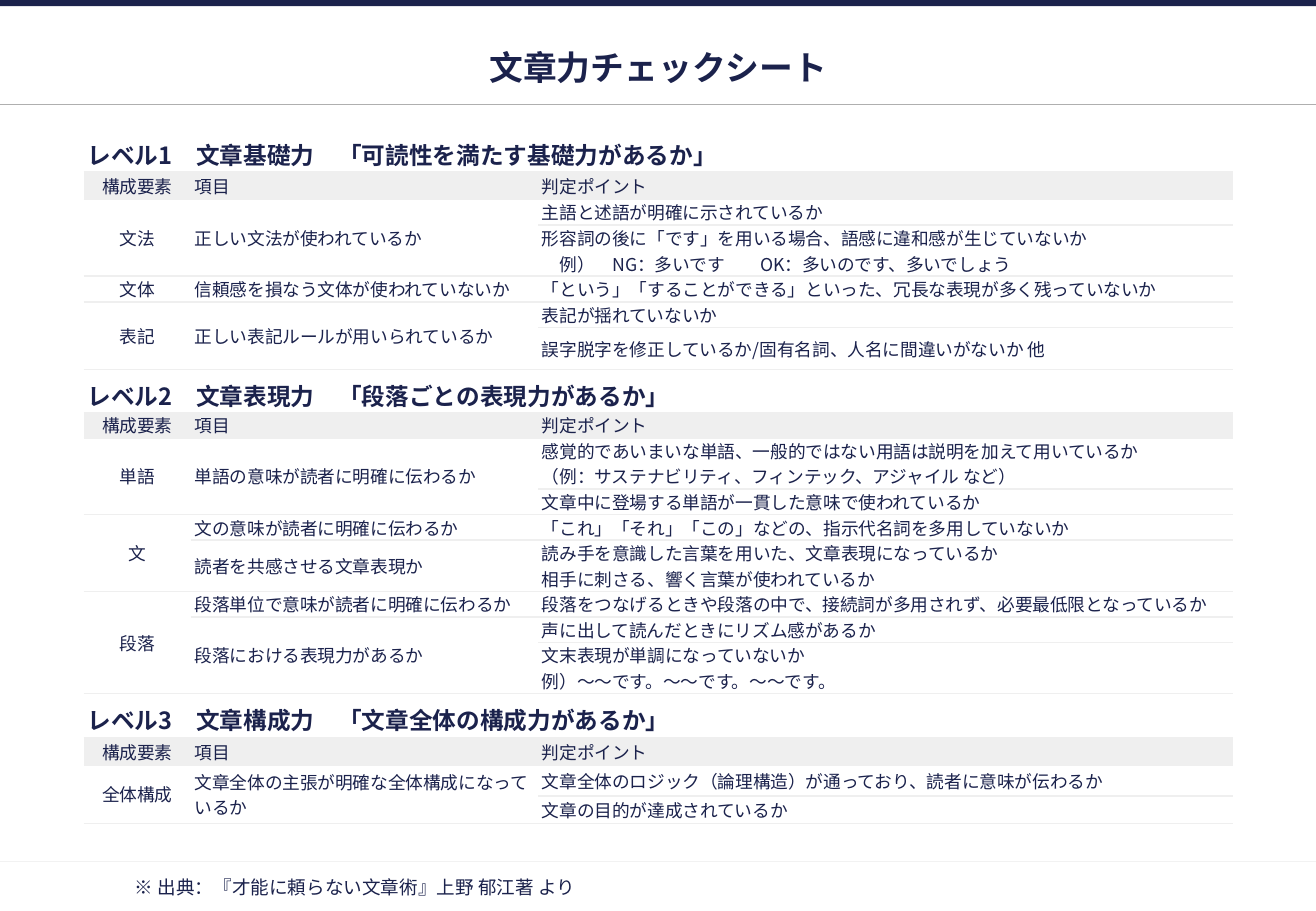
"""Build the writing-skill check sheet: a title, three level tables and a source line."""
import pptx
import pptx.util
import pptx.enum.shapes
import pptx.enum.text
import pptx.oxml
import pptx.oxml.ns
from lxml import etree
from pptx.dml.color import RGBColor
from pptx.util import Cm, Pt

COLORS = {"navy": "1B224C", "rule": "AFAFAF", "footer": "F2F2F2", "band": "EFEFEF"}
FONT = "Noto Sans CJK JP"
PLAIN_TABLE = "{2D5ABB26-0587-4C30-8999-92F81FD0307C}"
CENTER = pptx.enum.text.PP_ALIGN.CENTER
LEFT = pptx.enum.text.PP_ALIGN.LEFT
MIDDLE = pptx.enum.text.MSO_ANCHOR.MIDDLE
qn = pptx.oxml.ns.qn


def style_text(frame, size, bold=False, align=LEFT):
    for paragraph in frame.paragraphs:
        paragraph.alignment = align
        font = paragraph.font
        font.name = FONT
        font.size = Pt(size)
        font.bold = bold
        font.color.rgb = RGBColor.from_string(COLORS["navy"])
        defaults = paragraph._p.pPr.find(qn("a:defRPr"))
        etree.SubElement(defaults, qn("a:ea")).set("typeface", FONT)


def add_border(cell, position, side):
    border = pptx.oxml.parse_xml(
        f'<a:{side} xmlns:a="http://schemas.openxmlformats.org/drawingml/2006/main" w="12700">'
        f'<a:solidFill><a:srgbClr val="{COLORS["band"]}"/></a:solidFill></a:{side}>')
    cell._tc.get_or_add_tcPr().insert(position, border)


column_widths = [2.24, 7.26, 14.53]
column_heads = ("構成要素", "項目", "判定ポイント")
levels = [
    (2.87, "レベル1　文章基礎力　「可読性を満たす基礎力があるか」",
     [0.71, 0.58, 0.51, 1.07, 0.53, 0.53, 0.88],
     [("文法", "正しい文法が使われているか", "主語と述語が明確に示されているか"),
      ("", "", "形容詞の後に「です」を用いる場合、語感に違和感が生じていないか\v"
       "　例）　NG：多いです　　OK：多いのです、多いでしょう"),
      ("文体", "信頼感を損なう文体が使われていないか",
       "「という」「することができる」といった、冗長な表現が多く残っていないか"),
      ("表記", "正しい表記ルールが用いられているか", "表記が揺れていないか"),
      ("", "", "誤字脱字を修正しているか/固有名詞、人名に間違いがないか 他")]),
    (7.9, "レベル2　文章表現力　「段落ごとの表現力があるか」",
     [0.66, 0.51, 1.01, 0.51, 0.51, 1.01, 0.51, 0.51, 1.01],
     [("単語", "単語の意味が読者に明確に伝わるか",
       "感覚的であいまいな単語、一般的ではない用語は説明を加えて用いているか\v"
       "（例：サステナビリティ、フィンテック、アジャイル など）"),
      ("", "", "文章中に登場する単語が一貫した意味で使われているか"),
      ("文", "文の意味が読者に明確に伝わるか",
       "「これ」「それ」「この」などの、指示代名詞を多用していないか"),
      ("", "読者を共感させる文章表現か",
       "読み手を意識した言葉を用いた、文章表現になっているか\n"
       "相手に刺さる、響く言葉が使われているか"),
      ("段落", "段落単位で意味が読者に明確に伝わるか",
       "段落をつなげるときや段落の中で、接続詞が多用されず、必要最低限となっているか"),
      ("", "段落における表現力があるか", "声に出して読んだときにリズム感があるか"),
      ("", "", "文末表現が単調になっていないか\v例）～～です。～～です。～～です。")]),
    (14.68, "レベル3　文章構成力　「文章全体の構成力があるか」",
     [0.75, 0.57, 0.65, 0.57],
     [("全体構成", "文章全体の主張が明確な全体構成になっているか",
       "文章全体のロジック（論理構造）が通っており、読者に意味が伝わるか"),
      ("", "", "文章の目的が達成されているか")]),
]

deck = pptx.Presentation()
deck.slide_width, deck.slide_height = Cm(27.51), Cm(19.05)
slide = deck.slides.add_slide(deck.slide_layouts[5])

top_bar = slide.shapes.add_shape(
    pptx.enum.shapes.MSO_SHAPE.RECTANGLE, 0, 0, deck.slide_width, Cm(0.13))
top_bar.shadow.inherit = False
top_bar.fill.solid()
top_bar.fill.fore_color.rgb = RGBColor.from_string(COLORS["navy"])
top_bar.line.fill.background()

for rule_top, color in [(2.18, "rule"), (18.01, "footer")]:
    rule = slide.shapes.add_connector(
        pptx.enum.shapes.MSO_CONNECTOR.STRAIGHT, 0, Cm(rule_top), deck.slide_width, Cm(rule_top))
    rule.line.color.rgb = RGBColor.from_string(COLORS[color])
    rule.line.width = Pt(0.75)
    etree.SubElement(rule._element.spPr, qn("a:effectLst"))

heading = slide.shapes.title
heading.left, heading.top, heading.width, heading.height = Cm(1.75), Cm(0.86), Cm(24.03), Cm(1.07)
heading_frame = heading.text_frame
heading_frame.text = "文章力チェックシート"
heading_frame.vertical_anchor = MIDDLE
heading_frame.margin_left = heading_frame.margin_right = Cm(0.1)
heading_frame.margin_top = heading_frame.margin_bottom = Cm(0.1)
style_text(heading_frame, 20, bold=True, align=CENTER)

for level_top, level_name, row_heights, checks in levels:
    rows = [(level_name, "", ""), column_heads] + checks
    level_frame = slide.shapes.add_table(
        len(rows), 3, Cm(1.75), Cm(level_top), Cm(sum(column_widths)), Cm(sum(row_heights)))
    sheet = level_frame.table
    sheet.first_row = sheet.horz_banding = False
    sheet._tbl.tblPr.find(qn("a:tableStyleId")).text = PLAIN_TABLE
    for column, width in zip(sheet.columns, column_widths):
        column.width = Cm(width)
    for r, (height, texts) in enumerate(zip(row_heights, rows)):
        sheet.rows[r].height = Cm(height)
        for c, text in enumerate(texts):
            cell = sheet.cell(r, c)
            cell.margin_left = cell.margin_right = Cm(0.08)
            cell.margin_top = cell.margin_bottom = 0
            cell.text = text
            if r == 0:
                style_text(cell.text_frame, 14, bold=True)
            else:
                cell.vertical_anchor = MIDDLE
                style_text(cell.text_frame, 10.5, align=CENTER if c == 0 else LEFT)
            if r == 1:
                cell.fill.solid()
                cell.fill.fore_color.rgb = RGBColor.from_string(COLORS["band"])
            else:
                cell.fill.background()
            add_border(cell, 0, "lnB")
            if r > 0:
                add_border(cell, 0, "lnT")
    sheet.cell(0, 0).merge(sheet.cell(0, 2))
    for c in range(2):
        starts = [r for r in range(1, len(rows)) if rows[r][c]]
        for start, following in zip(starts, starts[1:] + [len(rows)]):
            if following - start > 1:
                sheet.cell(start, c).merge(sheet.cell(following - 1, c))

citation = slide.shapes.add_textbox(Cm(2.57), Cm(18.19), Cm(13.82), Cm(0.74)).text_frame
citation.word_wrap = True
citation.text = "※ 出典：『才能に頼らない文章術』上野 郁江著 より"
style_text(citation, 11)

deck.save("out.pptx")
